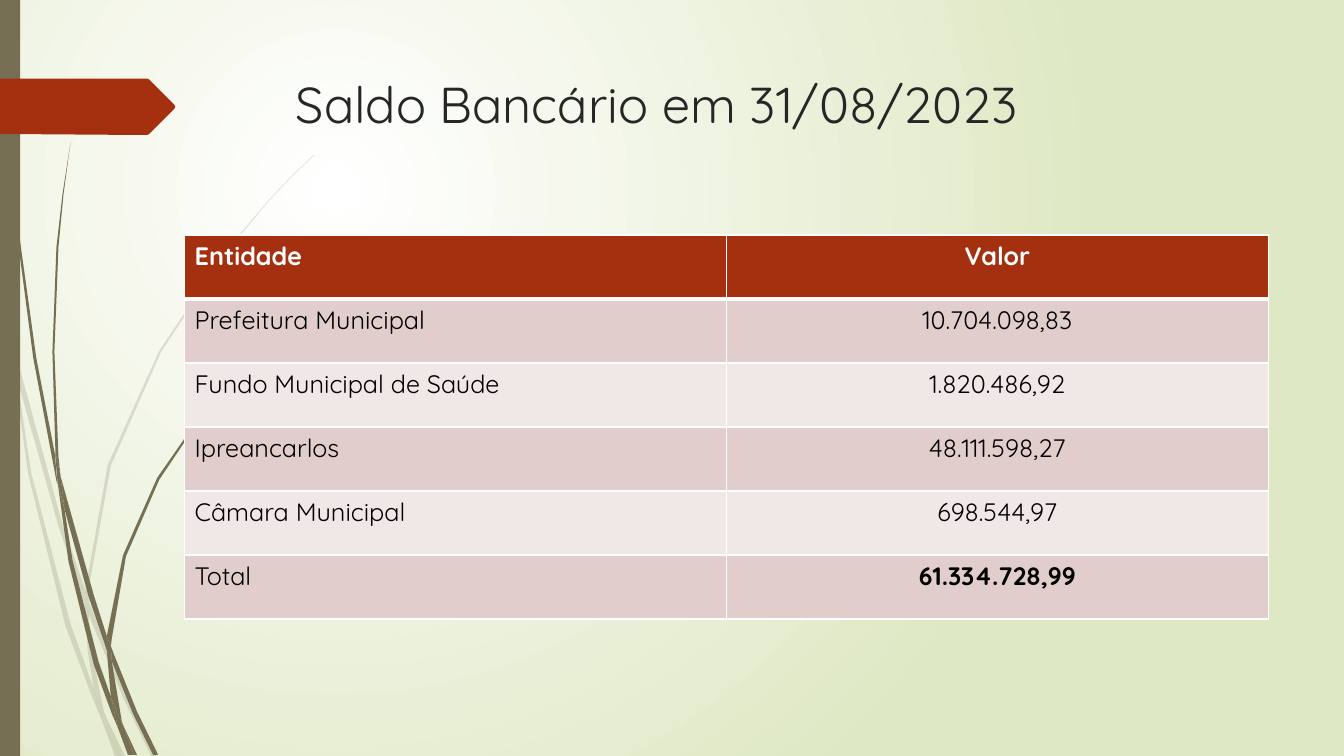
from lxml import etree
from pptx import Presentation
from pptx.dml.color import RGBColor
from pptx.enum import shapes, text
from pptx.oxml.ns import qn
from pptx.util import Cm, Pt

OLIVE = RGBColor(0x76, 0x6F, 0x54)
RUST = RGBColor(0xA5, 0x30, 0x10)
WHITE = RGBColor(0xFF, 0xFF, 0xFF)
PALE_GREEN = RGBColor(0xDF, 0xE8, 0xC4)
CHARCOAL = RGBColor(0x26, 0x26, 0x26)
BLACK = RGBColor(0, 0, 0)
BANDS = (RGBColor(0xE1, 0xCD, 0xCC), RGBColor(0xF0, 0xE8, 0xE7))
FONT = "Quicksand"
UNIT = Cm(2.54) / 100  # outline points are in hundredths of an inch

PALE_GRASS = [
    [(11, 350), (9, 322), (0, 282), (0, 299), (10, 344)],
    [(58, 522), (84, 599), (85, 586), (62, 520), (14, 345), (17, 376)],
    [(92, 607), (88, 596), (88, 610), (123, 694), (150, 750), (155, 750), (127, 692)],
    [(119, 750), (124, 750), (105, 711)],
    [(93, 683), (70, 619), (31, 469), (17, 376), (11, 350), (28, 470), (65, 621),
     (92, 693), (101, 714), (99, 707)],
    [(84, 599), (87, 646), (93, 683), (96, 692), (105, 711), (103, 706), (91, 646),
     (88, 610), (88, 608)],
    [(88, 584), (110, 462), (160, 349), (229, 245), (268, 198), (290, 175), (312, 154),
     (312, 153), (289, 175), (268, 197), (228, 244), (158, 348), (107, 461), (85, 584),
     (85, 586), (88, 596)],
    [(101, 714), (114, 750), (119, 750)],
    [(88, 608), (88, 610), (88, 596), (85, 586), (84, 599)],
    [(96, 692), (93, 683), (99, 707), (101, 714), (119, 750), (105, 711)],
]
DARK_GRASS = [
    [(7, 110), (17, 233), (33, 355), (56, 477), (57, 481), (55, 457), (55, 453),
     (36, 355), (19, 232), (8, 109), (5, 48), (4, 0), (3, 0), (4, 48)],
    [(88, 592), (106, 645), (106, 633), (106, 631), (93, 590), (60, 472), (64, 505)],
    [(113, 649), (110, 641), (111, 656), (132, 708), (152, 749), (157, 749), (136, 706)],
    [(110, 691), (98, 657), (72, 556), (64, 505), (57, 477), (68, 557), (93, 659),
     (111, 708), (117, 722), (116, 717)],
    [(60, 472), (58, 453), (54, 349), (58, 245), (63, 193), (70, 141), (62, 193),
     (56, 245), (52, 349), (55, 449)],
    [(133, 749), (136, 749), (122, 719)],
    [(57, 477), (64, 505), (60, 472), (55, 449), (55, 453)],
    [(111, 633), (125, 552), (158, 476), (205, 406), (231, 374), (245, 359), (261, 344),
     (260, 344), (245, 358), (231, 373), (204, 405), (156, 474), (122, 551), (106, 631),
     (110, 641)],
    [(117, 722), (127, 749), (131, 749)],
    [(106, 645), (110, 691), (116, 706), (122, 719), (121, 716), (111, 656), (109, 651)],
    [(106, 645), (109, 651), (111, 656), (110, 641), (106, 631), (106, 633)],
    [(116, 706), (110, 691), (116, 717), (117, 722), (130, 749), (133, 749), (122, 719)],
]
TAB = [(0, 0), (146, 0), (148, 1), (173, 26), (174, 28), (173, 30), (148, 55), (146, 56),
       (136, 56), (0, 55)]

BALANCES = [
    ("Entidade", "Valor"),
    ("Prefeitura Municipal", "10.704.098,83"),
    ("Fundo Municipal de Saúde", "1.820.486,92"),
    ("Ipreancarlos", "48.111.598,27"),
    ("Câmara Municipal", "698.544,97"),
    ("Total", "61.334.728,99"),
]


def paint(shape, color):
    shape.shadow.inherit = False
    shape.fill.solid()
    shape.fill.fore_color.rgb = color
    shape.line.fill.background()


def draw_outline(parent, points, left, top, color):
    builder = parent.build_freeform(*points[0], scale=UNIT)
    builder.add_line_segments(points[1:], close=True)
    outline = builder.convert_to_shape(left, top)
    paint(outline, color)
    return outline


def add_run(paragraph, words, size, color, bold=False):
    run = paragraph.add_run()
    run.text = words
    run.font.name = FONT
    run.font.size = Pt(size)
    run.font.bold = bold
    run.font.color.rgb = color


def set_background(slide):
    fill = slide.background.fill
    fill.gradient()
    for stop, color in zip(fill.gradient_stops, (WHITE, PALE_GREEN)):
        stop.color.rgb = color
    # Circular gradient centred in the upper left quarter
    gradient = slide.element.find(".//" + qn("a:gradFill"))
    linear = gradient.find(qn("a:lin"))
    circle = etree.Element(qn("a:path"), path="circle")
    etree.SubElement(circle, qn("a:fillToRect"), l="50000", t="50000", r="100000", b="100000")
    gradient.replace(linear, circle)


def add_grass(slide, left, top, blades, opacity=100):
    grass = slide.shapes.add_group_shape()
    for points in blades:
        blade = draw_outline(grass.shapes, points, left, top, OLIVE)
        if opacity < 100:
            color = blade.element.find(".//" + qn("a:srgbClr"))
            etree.SubElement(color, qn("a:alpha"), val=str(opacity * 1000))


def add_side_decoration(slide, left, top, height):
    add_grass(slide, left, top, PALE_GRASS, opacity=20)
    add_grass(slide, left, top, DARK_GRASS)
    bar = slide.shapes.add_shape(shapes.MSO_SHAPE.RECTANGLE, left, top, Cm(0.51), height)
    paint(bar, OLIVE)
    draw_outline(slide.shapes, TAB, left, top + Cm(1.98), RUST)


def add_title(slide, left, top, width, height):
    title = slide.shapes.add_textbox(left, top, width, height).text_frame
    title.word_wrap = True
    title.vertical_anchor = text.MSO_ANCHOR.TOP
    add_run(title.paragraphs[0], "Saldo Bancário em 31/08/2023", 36, CHARCOAL)


def set_borders(cell, widths):
    properties = cell._tc.get_or_add_tcPr()
    for side, width in widths.items():
        line = etree.SubElement(properties, qn("a:ln" + side), w=str(Pt(width)))
        solid = etree.SubElement(line, qn("a:solidFill"))
        etree.SubElement(solid, qn("a:srgbClr"), val=str(WHITE))


def add_balances(slide, left, top, width, height):
    rows, columns = len(BALANCES), len(BALANCES[0])
    table = slide.shapes.add_table(rows, columns, left, top, width, height).table
    for r, record in enumerate(BALANCES):
        header = r == 0
        for c, words in enumerate(record):
            cell = table.cell(r, c)
            set_borders(cell, {"L": 1, "R": 1, "T": 3 if r == 1 else 1, "B": 3 if header else 1})
            cell.fill.solid()
            cell.fill.fore_color.rgb = RUST if header else BANDS[(r - 1) % 2]
            paragraph = cell.text_frame.paragraphs[0]
            if c == 1:
                paragraph.alignment = text.PP_ALIGN.CENTER
            grand_total = r == rows - 1 and c == 1
            add_run(paragraph, words, 18, WHITE if header else BLACK, header or grand_total)


def main():
    deck = Presentation()
    deck.slide_width, deck.slide_height = Cm(33.87), Cm(19.05)
    slide = deck.slides.add_slide(deck.slide_layouts[6])
    set_background(slide)
    add_side_decoration(slide, 0, 0, deck.slide_height)
    add_title(slide, Cm(7.21), Cm(1.73), Cm(24.77), Cm(3.56))
    add_balances(slide, Cm(4.65), Cm(5.92), Cm(27.31), Cm(9.68))
    deck.save("out.pptx")


if __name__ == "__main__":
    main()
